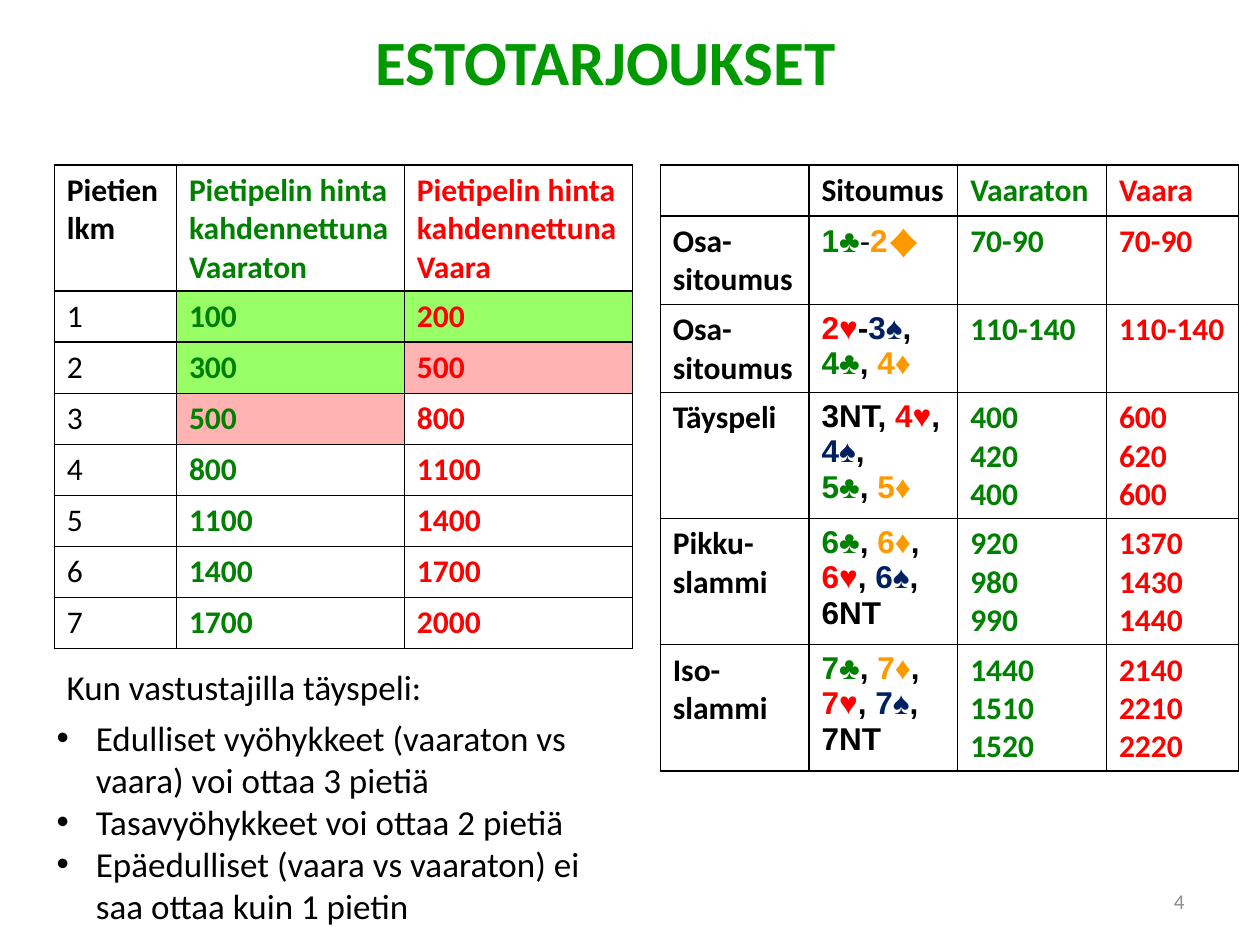
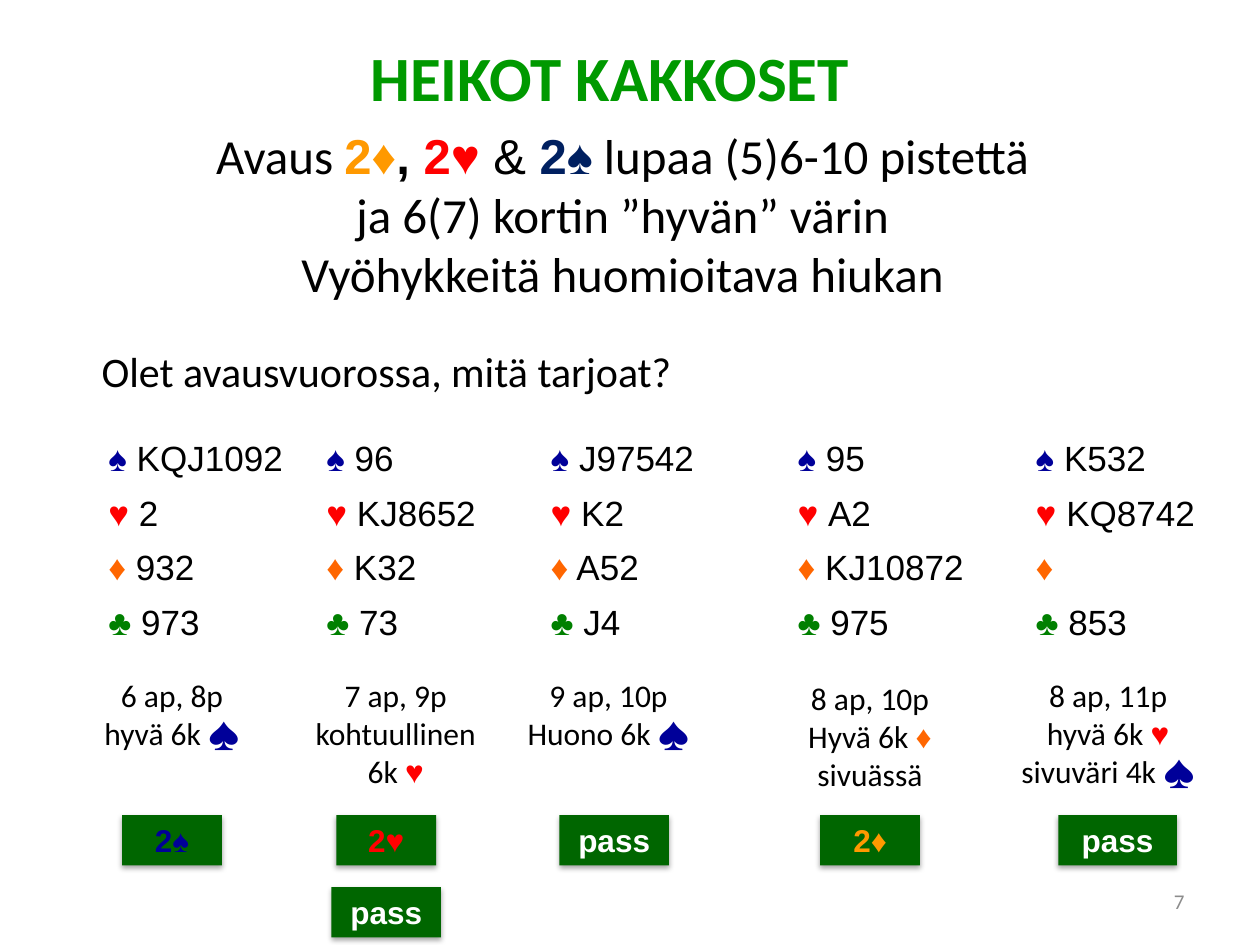
from lxml import etree
from pptx import Presentation
from pptx.dml.color import RGBColor
from pptx.enum.shapes import MSO_SHAPE
from pptx.enum.text import MSO_ANCHOR, PP_ALIGN
from pptx.oxml import parse_xml
from pptx.oxml.ns import qn
from pptx.util import Pt

LEFT, MID, RIGHT, JUST = PP_ALIGN.LEFT, PP_ALIGN.CENTER, PP_ALIGN.RIGHT, PP_ALIGN.JUSTIFY
TOP, HALF = MSO_ANCHOR.TOP, MSO_ANCHOR.MIDDLE
RECT = MSO_SHAPE.RECTANGLE
NS = "http://schemas.openxmlformats.org/drawingml/2006/main"
SANS, ARIAL = "Calibri", "Arial"
BLACK, WHITE, GREY = "000000", "FFFFFF", "8C8C8C"
GREEN, RED, NAVY, BLUE = "008000", "FF0000", "002060", "000099"
AMBER, ORANGE = "FF9900", "FF6600"
TITLE, CARD = "009900", "006600"
LIME, PINK = "99FF66", "FFB3B3"

DEAL = {"♣": (GREEN, ARIAL, True), "♦": (AMBER, ARIAL, True),
        "♥": (RED, ARIAL, True), "♠": (NAVY, ARIAL, True)}
PART = {**DEAL, "-": (BLACK, ARIAL, False), "2": (AMBER, ARIAL, True),
        "♦": (AMBER, SANS, True)}
OPEN = {**DEAL, ",": (BLACK, ARIAL, True), "&": (BLACK, ARIAL, False)}
HAND = {"♣": (GREEN, ARIAL, False), "♦": (ORANGE, ARIAL, False),
        "♥": (RED, ARIAL, False), "♠": (BLUE, ARIAL, False)}
NOTE = {**HAND, "♠": (BLUE, SANS, False)}
BID = {"♥": (RED, ARIAL, False), "♦": (AMBER, ARIAL, False)}


def hue(code):
    return RGBColor.from_string(code)


def write(frame, text, size=18, color=BLACK, font=SANS, bold=False,
          align=LEFT, anchor=TOP, marks={}, bullet=False):
    frame.word_wrap = True
    frame.vertical_anchor = anchor
    for i, line in enumerate(text.split("\n")):
        para = frame.paragraphs[0] if i == 0 else frame.add_paragraph()
        para.alignment = align
        if bullet:
            props = para._p.get_or_add_pPr()
            props.set("marL", str(Pt(22.5)))
            props.set("indent", str(-Pt(22.5)))
            etree.SubElement(props, qn("a:buFont")).set("typeface", ARIAL)
            etree.SubElement(props, qn("a:buChar")).set("char", "•")
        for part in filter(None, line.split("|")):
            tint, face, heavy = marks.get(part.strip()[-1], (color, font, bold))
            run = para.add_run()
            run.text = part
            run.font.size = Pt(size)
            run.font.name = face
            run.font.bold = heavy
            run.font.color.rgb = hue(tint)


deck = Presentation()
deck.slide_width, deck.slide_height = Pt(720), Pt(540)
costs, twos = [deck.slides.add_slide(deck.slide_layouts[6]) for _ in range(2)]

title = dict(size=36, color=TITLE, bold=True, align=MID)
page = dict(size=12, color=GREY, align=RIGHT, anchor=HALF)
note = dict(align=MID, marks=NOTE)
texts = [
    (costs, 59.8, 9.4, 572.4, 51, "ESTOTARJOUKSET", title),
    (costs, 31, 376.6, 249, 31.5, "Kun vastustajilla täyspeli:", dict(size=20)),
    (costs, 25.2, 406, 320.4, 128,
     "Edulliset vyöhykkeet (vaaraton vs vaara) voi ottaa 3 pietiä\n"
     "Tasavyöhykkeet voi ottaa 2 pietiä\n"
     "Epäedulliset (vaara vs vaaraton) ei saa ottaa kuin 1 pietin",
     dict(size=20, bullet=True)),
    (costs, 516, 500.5, 168, 28.8, "4", page),
    (twos, 74.9, 18.7, 547.2, 51, "HEIKOT KAKKOSET", title),
    (twos, 36.7, 68.4, 638, 108.7,
     "Avaus |2♦|, |2♥ |& |2♠| lupaa (5)6-10 pistettä\n"
     "ja 6(7) kortin ”hyvän” värin\nVyöhykkeitä huomioitava hiukan",
     dict(size=28, align=MID, marks=OPEN)),
    (twos, 51, 193.7, 623.5, 36, "Olet avausvuorossa, mitä tarjoat?", dict(size=24)),
    (twos, 50.4, 383, 95.8, 51, "6 ap, 8p\nhyvä 6k |♠", note),
    (twos, 171.4, 383, 109.4, 72.7, "7 ap, 9p\nkohtuullinen 6k |♥", note),
    (twos, 288.7, 383, 118, 51, "9 ap, 10p\nHuono 6k |♠", note),
    (twos, 435.6, 384.5, 123, 72.7, "8 ap, 10p\nHyvä 6k |♦\nsivuässä", note),
    (twos, 573.8, 383, 118.8, 72.7, "8 ap, 11p\nhyvä 6k |♥\nsivuväri 4k |♠", note),
    (twos, 516, 500.5, 168, 28.8, "7", page),
]
for slide, x, y, w, h, text, look in texts:
    box = slide.shapes.add_textbox(Pt(x), Pt(y), Pt(w), Pt(h))
    write(box.text_frame, text, **look)

dark, safe, risk = [dict(color=c, bold=True) for c in (BLACK, GREEN, RED)]
deal = dict(font=ARIAL, bold=True, marks=DEAL)
hand = dict(size=20, font=ARIAL, align=JUST, marks=HAND)

tricks = [["Pietien lkm", "Pietipelin hinta kahdennettuna\nVaaraton",
           "Pietipelin hinta kahdennettuna\nVaara"]]
prices = [100, 300, 500, 800, 1100, 1400, 1700, 2000]
for i in range(7):
    high = 200 if i == 0 else prices[i + 1]
    if i == 1:
        high = 500
    tricks.append([str(i + 1), str(prices[i]), str(high)])

scores = [
    ["", "Sitoumus", "Vaaraton", "Vaara"],
    ["Osa-\nsitoumus", "1♣|-|2|♦", "70-90", "70-90"],
    ["Osa-\nsitoumus", "2♥|-|3♠|,\n4♣|, |4♦", "110-140", "110-140"],
    ["Täyspeli", "3NT, |4♥|, |4♠|,\n5♣|, |5♦", "400\n420\n400", "600\n620\n600"],
    ["Pikku-slammi", "6♣|, |6♦|,| 6♥|, |6♠|,\n6NT", "920\n980\n990", "1370\n1430\n1440"],
    ["Iso-slammi", "7♣|, |7♦|,| 7♥|, |7♠|,\n7NT", "1440\n1510\n1520", "2140\n2210\n2220"],
]
hands = [
    ["♠| KQJ1092", "♠| 96", "♠| J97542", "♠| 95", "♠| K532"],
    ["♥ |2", "♥ |KJ8652", "♥ |K2", "♥ |A2", "♥ |KQ8742"],
    ["♦| 932", "♦| K32", "♦| A52", "♦| KJ10872", "♦"],
    ["♣| 973", "♣| 73", "♣| J4", "♣| 975", "♣| 853"],
]
fills = {(1, 1): LIME, (1, 2): LIME, (2, 1): LIME, (2, 2): PINK, (3, 1): PINK}
grids = [
    (costs, 31, 94.3, [69.8, 130.3, 130.3], [72] + [29.2] * 7, tricks,
     [dark, safe, risk], [{}, safe, risk], fills, {}, True),
    (costs, 377.3, 94.3, [85, 85, 85, 75.6], [29.2, 50, 50, 72, 72, 72], scores,
     [dark, dark, safe, risk], [dark, deal, safe, risk], {},
     {(1, 1): dict(marks=PART)}, True),
    (twos, 54.7, 247.7, [124.6, 128.2, 141.1, 136.1, 113], [31.1] * 4, hands,
     [hand] * 5, [hand] * 5, {}, {}, False),
]
for slide, x, y, wide, tall, rows, heads, looks, tints, odd, ruled in grids:
    grid = slide.shapes.add_table(len(rows), len(wide), Pt(x), Pt(y),
                                  Pt(sum(wide)), Pt(sum(tall))).table
    grid.first_row = grid.horz_banding = False
    for col, w in zip(grid.columns, wide):
        col.width = Pt(w)
    for r, row in enumerate(rows):
        grid.rows[r].height = Pt(tall[r])
        for c, text in enumerate(row):
            cell = grid.cell(r, c)
            base = looks[c] if r else heads[c]
            write(cell.text_frame, text, **{**base, **odd.get((r, c), {})})
            props = cell._tc.get_or_add_tcPr()
            if ruled:
                for side in "LRTB":
                    props.append(parse_xml(
                        f'<a:ln{side} xmlns:a="{NS}" w="{Pt(1)}"><a:solidFill>'
                        f'<a:srgbClr val="{BLACK}"/></a:solidFill></a:ln{side}>'))
            if (r, c) in tints:
                cell.fill.solid()
                cell.fill.fore_color.rgb = hue(tints[r, c])
            else:
                cell.fill.background()

bids = [
    (69.8, 465.8, 57, "2♠", BLUE), (192.2, 465.8, 57, "2|♥", RED),
    (319.7, 465.8, 62.6, "pass", WHITE), (468.7, 465.8, 57, "2|♦", AMBER),
    (604.8, 465.8, 67.7, "pass", WHITE), (189.4, 506.9, 62.6, "pass", WHITE),
]
for x, y, w, text, tint in bids:
    card = twos.shapes.add_shape(RECT, Pt(x), Pt(y), Pt(w), Pt(28.8))
    card.fill.solid()
    card.fill.fore_color.rgb = hue(CARD)
    card.line.fill.background()
    card.shadow.inherit = False
    glow = card._element.spPr.find(qn("a:effectLst"))
    glow.append(parse_xml(
        f'<a:outerShdw xmlns:a="{NS}" blurRad="{Pt(3.1)}" dist="{Pt(1.8)}" dir="5400000" '
        f'rotWithShape="0"><a:srgbClr val="{BLACK}"><a:alpha val="35000"/></a:srgbClr>'
        '</a:outerShdw>'))
    write(card.text_frame, text, color=tint, font=ARIAL, bold=True,
          align=MID, anchor=HALF, marks=BID)

deck.save("out.pptx")
